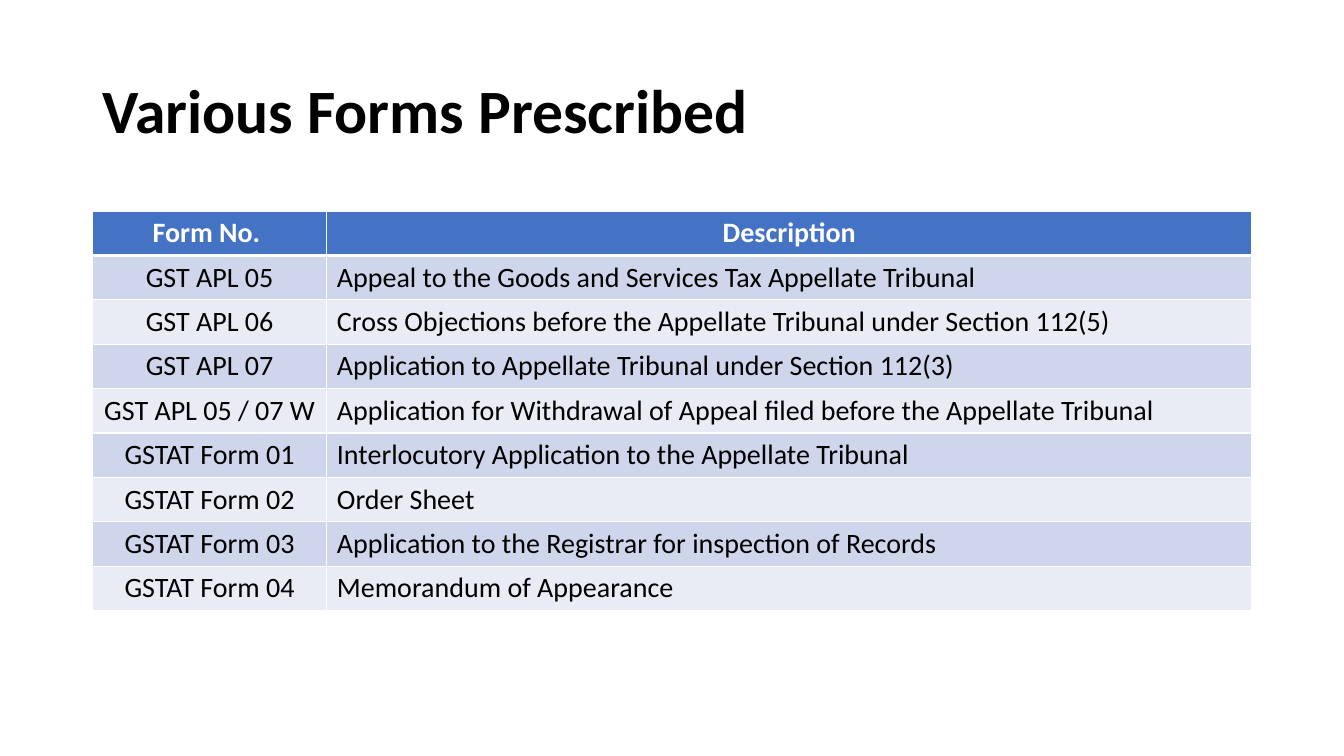
from lxml import etree
from pptx import Presentation
from pptx.dml.color import RGBColor
from pptx.enum.text import MSO_ANCHOR, PP_ALIGN
from pptx.oxml.ns import qn
from pptx.util import Pt

LEFT, CENTER = PP_ALIGN.LEFT, PP_ALIGN.CENTER
MIDDLE = MSO_ANCHOR.MIDDLE

BLACK = RGBColor(0x00, 0x00, 0x00)
WHITE = RGBColor(0xFF, 0xFF, 0xFF)
HEADER_BLUE = RGBColor(0x44, 0x72, 0xC4)
BANDS = (RGBColor(0xCF, 0xD5, 0xEA), RGBColor(0xE9, 0xEB, 0xF5))

TITLE_ONLY_LAYOUT = 5
HEADER = ("Form No. ", "Description")
FORMS = [
    ("GST APL 05", "Appeal to the Goods and Services Tax Appellate Tribunal"),
    ("GST APL 06", "Cross Objections before the Appellate Tribunal under Section 112(5)"),
    ("GST APL 07", "Application to Appellate Tribunal under Section 112(3)"),
    ("GST APL 05 / 07 W", "Application for Withdrawal of Appeal filed before the Appellate Tribunal"),
    ("GSTAT Form 01", "Interlocutory Application to the Appellate Tribunal"),
    ("GSTAT Form 02", "Order Sheet"),
    ("GSTAT Form 03", "Application to the Registrar for inspection of Records"),
    ("GSTAT Form 04", "Memorandum of Appearance"),
]


class SlideBuilder:
    font_name = "Calibri"

    def __init__(self, slide):
        self.slide = slide

    def add_text(self, text_frame, text, size=20, color=BLACK, bold=False,
                 align=LEFT, line_spacing=1.0):
        paragraph = text_frame.paragraphs[0]
        paragraph.alignment = align
        paragraph.line_spacing = line_spacing
        run = paragraph.add_run()
        run.text = text
        font = run.font
        font.name, font.size, font.bold = self.font_name, Pt(size), bold
        font.color.rgb = color

    def title(self, text, left, top, width, height):
        shape = self.slide.shapes.title
        shape.left, shape.top = Pt(left), Pt(top)
        shape.width, shape.height = Pt(width), Pt(height)
        shape.text_frame.vertical_anchor = MIDDLE
        self.add_text(shape.text_frame, text, size=44, bold=True, line_spacing=0.9)

    def borders(self, cell, bottom):
        """Draw white cell borders, 1 pt wide except for the given bottom width."""
        properties = cell._tc.get_or_add_tcPr()
        for side, width in (("L", 1), ("R", 1), ("T", 1), ("B", bottom)):
            line = etree.SubElement(properties, qn(f"a:ln{side}"), w=str(Pt(width)))
            fill = etree.SubElement(line, qn("a:solidFill"))
            etree.SubElement(fill, qn("a:srgbClr"), val=str(WHITE))

    def table(self, rows, left, top, column_widths, row_height):
        """Add a table with a header row and banded body rows."""
        frame = self.slide.shapes.add_table(
            len(rows), len(column_widths), Pt(left), Pt(top),
            Pt(sum(column_widths)), Pt(row_height * len(rows)))
        table = frame.table
        for column, width in zip(table.columns, column_widths):
            column.width = Pt(width)
        for row_index, texts in enumerate(rows):
            is_header = row_index == 0
            for column_index, text in enumerate(texts):
                cell = table.cell(row_index, column_index)
                self.borders(cell, bottom=3 if is_header else 1)
                cell.fill.solid()
                cell.fill.fore_color.rgb = (
                    HEADER_BLUE if is_header else BANDS[(row_index - 1) % 2])
                self.add_text(cell.text_frame, text, bold=is_header,
                              color=WHITE if is_header else BLACK,
                              align=CENTER if is_header or column_index == 0 else LEFT)


def main():
    presentation = Presentation()
    presentation.slide_width, presentation.slide_height = Pt(960), Pt(540)
    layout = presentation.slide_layouts[TITLE_ONLY_LAYOUT]
    builder = SlideBuilder(presentation.slides.add_slide(layout))
    builder.title("Various Forms Prescribed", 66, 28.75, 828, 104.4)
    builder.table([HEADER, *FORMS], 66, 150.7, (167.5, 660.5), 31.2)
    presentation.save("out.pptx")


if __name__ == "__main__":
    main()
